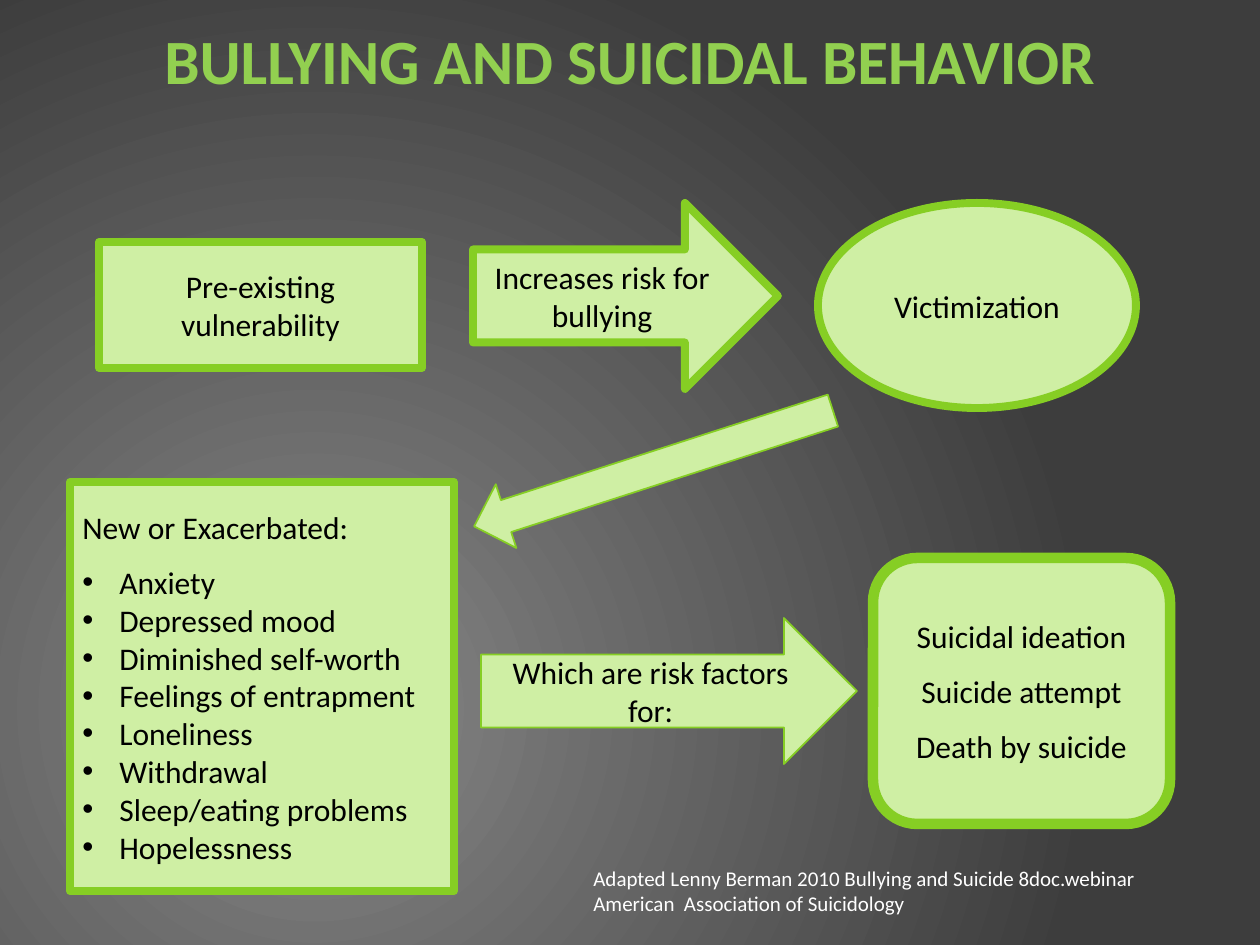
from dataclasses import dataclass

import lxml.etree
import pptx
import pptx.dml.color
import pptx.enum.shapes
import pptx.enum.text
import pptx.oxml.ns
import pptx.util

EMU_PER_PX = 914400 / 126
FONT = "Calibri"
COLORS = {
    "glow": "878787",
    "backdrop": "3D3D3D",
    "fill": "CFEFA4",
    "outline": "86CE24",
    "text": "000000",
    "title": "92D050",
    "source": "FFFFFF",
}
BULLET_INDENT = 37
PARAGRAPH_GAP = 10

SHAPES = pptx.enum.shapes.MSO_SHAPE
ALIGN = pptx.enum.text.PP_ALIGN
ANCHOR = pptx.enum.text.MSO_ANCHOR


@dataclass
class Line:
    text: str
    gap: int = 0
    bullet: bool = False


@dataclass
class Box:
    left: int
    top: int
    width: int
    height: int


@dataclass
class Node:
    kind: SHAPES
    box: Box
    outline: float
    lines: tuple[Line, ...] = ()
    align: ALIGN = ALIGN.CENTER
    rotation: float = 0


@dataclass
class Caption:
    box: Box
    line: Line
    size: int
    color: str
    align: ALIGN
    bold: bool = False


SYMPTOMS = (
    "Anxiety", "Depressed mood", "Diminished self-worth", "Feelings of entrapment",
    "Loneliness", "Withdrawal", "Sleep/eating problems", "Hopelessness",
)
SYMPTOM_LINES = tuple(
    Line(symptom, gap=0 if index else PARAGRAPH_GAP, bullet=True)
    for index, symptom in enumerate(SYMPTOMS)
)

NODES = (
    Node(SHAPES.RECTANGLE, Box(99, 242, 323, 126), 4.5, (Line("Pre-existing vulnerability"),)),
    Node(SHAPES.RIGHT_ARROW, Box(473, 203, 305, 186), 4.5, (Line("Increases risk for bullying"),)),
    Node(SHAPES.OVAL, Box(818, 203, 318, 205), 4.5, (Line("Victimization"),)),
    Node(SHAPES.DOWN_ARROW, Box(620, 280, 67, 377), 1, rotation=72.1),
    Node(SHAPES.RECTANGLE, Box(70, 482, 384, 409), 4.5,
         (Line("New or Exacerbated:"), *SYMPTOM_LINES), ALIGN.LEFT),
    Node(SHAPES.RIGHT_ARROW, Box(481, 618, 376, 146), 1, (Line("Which are risk factors for:"),)),
    Node(SHAPES.ROUNDED_RECTANGLE, Box(873, 558, 297, 266), 6,
         (Line("Suicidal ideation"), Line("Suicide attempt", PARAGRAPH_GAP),
          Line("Death by suicide", PARAGRAPH_GAP))),
)

CAPTIONS = (
    Caption(Box(581, 859, 586, 64),
            Line("Adapted Lenny Berman 2010 Bullying and Suicide 8doc.webinar "
                 "American  Association of Suicidology"),
            12, "source", ALIGN.LEFT),
    Caption(Box(63, 15, 1134, 219), Line("BULLYING AND SUICIDAL BEHAVIOR"),
            36, "title", ALIGN.CENTER, bold=True),
)


def px(length: int) -> int:
    return round(length * EMU_PER_PX)


def rgb(name: str) -> pptx.dml.color.RGBColor:
    return pptx.dml.color.RGBColor.from_string(COLORS[name])


def place(box: Box) -> tuple[int, ...]:
    return px(box.left), px(box.top), px(box.width), px(box.height)


def add_bullet(paragraph) -> None:
    properties = paragraph._p.get_or_add_pPr()
    properties.set("marL", str(px(BULLET_INDENT)))
    properties.set("indent", str(-px(BULLET_INDENT)))
    for tag, attribute, value in (("a:buFont", "typeface", "Arial"), ("a:buChar", "char", "•")):
        element = lxml.etree.SubElement(properties, pptx.oxml.ns.qn(tag))
        element.set(attribute, value)


def write_lines(text_frame, lines: tuple[Line, ...], size: int, color: str,
                align: ALIGN, bold: bool = False) -> None:
    text_frame.word_wrap = True
    text_frame.text = "\n".join(line.text for line in lines)
    for paragraph, line in zip(text_frame.paragraphs, lines):
        paragraph.alignment = align
        if line.gap:
            paragraph.space_before = pptx.util.Pt(line.gap)
        if line.bullet:
            add_bullet(paragraph)
        for run in paragraph.runs:
            run.font.name = FONT
            run.font.size = pptx.util.Pt(size)
            run.font.bold = bold
            run.font.color.rgb = rgb(color)


def add_node(slide, node: Node) -> None:
    shape = slide.shapes.add_shape(node.kind, *place(node.box))
    shape.rotation = node.rotation
    shape.shadow.inherit = False
    shape.fill.solid()
    shape.fill.fore_color.rgb = rgb("fill")
    shape.line.color.rgb = rgb("outline")
    shape.line.width = pptx.util.Pt(node.outline)
    if node.lines:
        shape.text_frame.vertical_anchor = ANCHOR.MIDDLE
        write_lines(shape.text_frame, node.lines, 18, "text", node.align)


def add_caption(slide, caption: Caption) -> None:
    shape = slide.shapes.add_textbox(*place(caption.box))
    shape.text_frame.vertical_anchor = ANCHOR.TOP
    write_lines(shape.text_frame, (caption.line,), caption.size, caption.color,
                caption.align, caption.bold)


def paint_background(slide) -> None:
    fill = slide.background.fill
    fill.gradient()
    for stop, name, position in zip(fill.gradient_stops, ("glow", "backdrop"), (0, 1)):
        stop.color.rgb = rgb(name)
        stop.position = position
    # Radial glow centred in the lower left
    qn = pptx.oxml.ns.qn
    gradient = next(slide.element.iter(qn("a:gradFill")))
    linear = gradient.find(qn("a:lin"))
    radial = lxml.etree.Element(qn("a:path"), {"path": "circle"})
    lxml.etree.SubElement(radial, qn("a:fillToRect"),
                          {"l": "50000", "t": "100000", "r": "100000", "b": "50000"})
    gradient.replace(linear, radial)


def main() -> None:
    presentation = pptx.Presentation()
    presentation.slide_width = px(1260)
    presentation.slide_height = px(945)
    slide = presentation.slides.add_slide(presentation.slide_layouts[6])

    paint_background(slide)

    # Flow from vulnerability to outcomes
    for node in NODES:
        add_node(slide, node)

    # Source and title
    for caption in CAPTIONS:
        add_caption(slide, caption)

    presentation.save("out.pptx")


if __name__ == "__main__":
    main()
